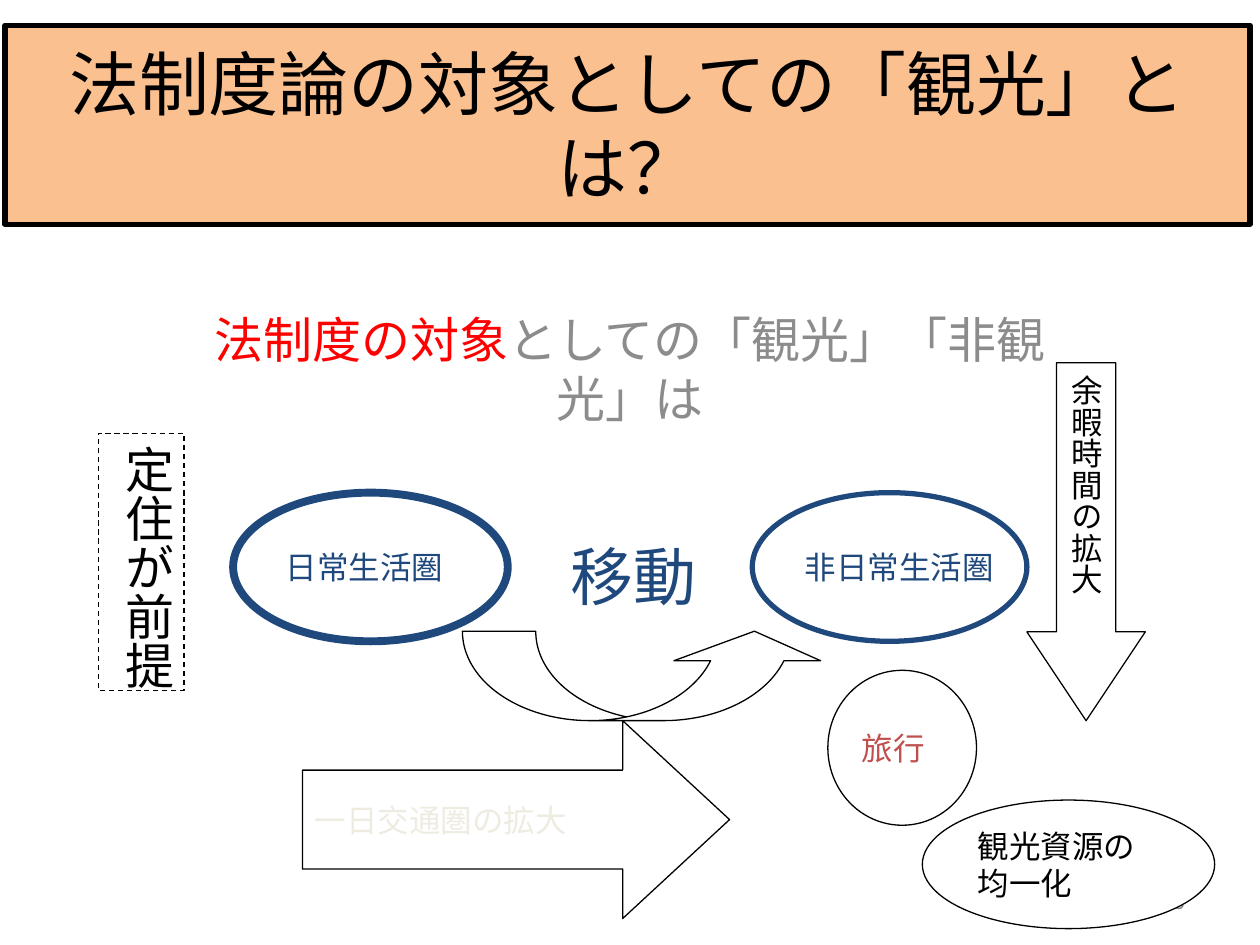
from pptx import Presentation
from pptx import util as u
from pptx.dml.color import RGBColor
from pptx.enum import dml, shapes, text

INK, NAVY, WHITE, GREY = "000000", "1F497D", "FFFFFF", "8C8C8C"
RED, BRICK, CREAM, PEACH = "FF0000", "C0504D", "EEECE1", "FAC090"
FORM = shapes.MSO_SHAPE
LEFT, CENTER, RIGHT = text.PP_ALIGN.LEFT, text.PP_ALIGN.CENTER, text.PP_ALIGN.RIGHT

TITLE = "法制度論の対象としての「観光」とは？"
TITLE_INSET = 0.3
QUESTION = [("法制度の対象", RED), ("としての「観光」「非観光」は", GREY)]
SPHERE, SPHERE_TOP = (2.18, 1.18), 3.91
THIN = 0.75

# Back to front; box is left, top, width, height in inches
DIAGRAM = [
    dict(form=FORM.OVAL, box=(1.85, SPHERE_TOP, *SPHERE), words="日常生活圏",
         color=NAVY, line=(NAVY, 4.5)),
    dict(form=FORM.OVAL, box=(5.97, SPHERE_TOP, *SPHERE), words="非日常生活圏",
         color=NAVY, line=(NAVY, 3)),
    dict(form=FORM.CURVED_DOWN_ARROW, box=(3.67, 5.01, 2.9, 0.71),
         adjust=(0.82, 1.64, 0.33), flipped=True),
    dict(form=None, box=(4.43, 4.22, 1.2, 0.7), words="移動", size=36, color=NAVY),
    dict(form=FORM.RECTANGLE, box=(0.78, 3.44, 0.68, 2.04), words="定住が前提",
         size=28, vertical=True, dashed=True, anchor=text.MSO_ANCHOR.TOP),
    dict(form=FORM.RIGHT_ARROW, box=(2.4, 5.72, 3.39, 1.57), words="一日交通圏の拡大",
         color=CREAM, fill=WHITE, adjust=(0.5, 0.54)),
    dict(form=FORM.OVAL, box=(6.57, 5.32, 1.18, 1.23), words="旅行",
         color=BRICK, fill=WHITE),
    dict(form=FORM.DOWN_ARROW, box=(8.15, 2.88, 0.94, 2.84), words="余暇時間の拡大",
         vertical=True, adjust=(0.5, 0.75)),
    dict(form=FORM.OVAL, box=(7.32, 6.35, 2.32, 1.02), words="観光資源の\n均一化",
         fill=WHITE),
]


def rgb(code):
    return RGBColor.from_string(code)


def inches(box):
    return [u.Inches(length) for length in box]


def style(run, size, color, font="Calibri"):
    run.font.size, run.font.name = u.Pt(size), font
    run.font.color.rgb = rgb(color)


def paint(part, fill, line):
    if fill:
        part.fill.solid()
        part.fill.fore_color.rgb = rgb(fill)
    else:
        part.fill.background()
    part.line.color.rgb = rgb(line[0])
    part.line.width = u.Pt(line[1])


def write(frame, words, size, color, align=LEFT, font="Calibri"):
    frame.text = words
    for paragraph in frame.paragraphs:
        paragraph.alignment = align
        for run in paragraph.runs:
            style(run, size, color, font)


def add_part(slide, form, box, words="", size=18, color=INK, fill=None,
             line=(INK, THIN), adjust=(), flipped=False, vertical=False,
             dashed=False, anchor=text.MSO_ANCHOR.MIDDLE):
    """Add one diagram part; without a form it is a plain text box."""
    if form is None:
        part = slide.shapes.add_textbox(*inches(box))
    else:
        part = slide.shapes.add_shape(form, *inches(box))
        part.shadow.inherit = False
        paint(part, fill, line)
        part.text_frame.vertical_anchor = anchor
    for index, value in enumerate(adjust):
        part.adjustments[index] = value
    if dashed:
        part.line.dash_style = dml.MSO_LINE.DASH
    if flipped:
        part.element.spPr.xfrm.set("flipV", "1")
    if words:
        frame = part.text_frame
        frame.word_wrap = False
        write(frame, words, size, color)
        if vertical:
            frame._txBody.bodyPr.set("vert", "eaVert")


def add_title(slide):
    """Fill the title; its side insets make the last two characters wrap together."""
    title = slide.shapes.title
    title.left, title.top, title.width, title.height = inches((0.04, 0.2, 9.88, 1.58))
    paint(title, PEACH, (INK, 3))
    frame = title.text_frame
    frame.word_wrap = True
    frame.auto_size = text.MSO_AUTO_SIZE.NONE
    frame.margin_left = frame.margin_right = u.Inches(TITLE_INSET)
    frame.vertical_anchor = text.MSO_ANCHOR.MIDDLE
    write(frame, TITLE, 40, INK, CENTER)


def add_page_number(slide):
    frame = slide.shapes.add_textbox(*inches((7.17, 6.95, 2.33, 0.4))).text_frame
    frame.word_wrap = True
    frame.vertical_anchor = text.MSO_ANCHOR.MIDDLE
    write(frame, "13", 12, GREY, RIGHT, "Arial")


def add_question(slide):
    frame = slide.shapes.add_textbox(*inches((1.5, 2.41, 7, 0.79))).text_frame
    frame.word_wrap = True
    paragraph = frame.paragraphs[0]
    paragraph.alignment, paragraph.space_before = CENTER, u.Pt(5.6)
    for words, color in QUESTION:
        run = paragraph.add_run()
        run.text = words
        style(run, 28, color)


def main():
    deck = Presentation()
    deck.slide_width, deck.slide_height = u.Inches(10), u.Inches(7.5)
    slide = deck.slides.add_slide(deck.slide_layouts[5])
    add_title(slide)
    add_page_number(slide)
    add_question(slide)
    for part in DIAGRAM:
        add_part(slide, **part)
    deck.save("out.pptx")


if __name__ == "__main__":
    main()
